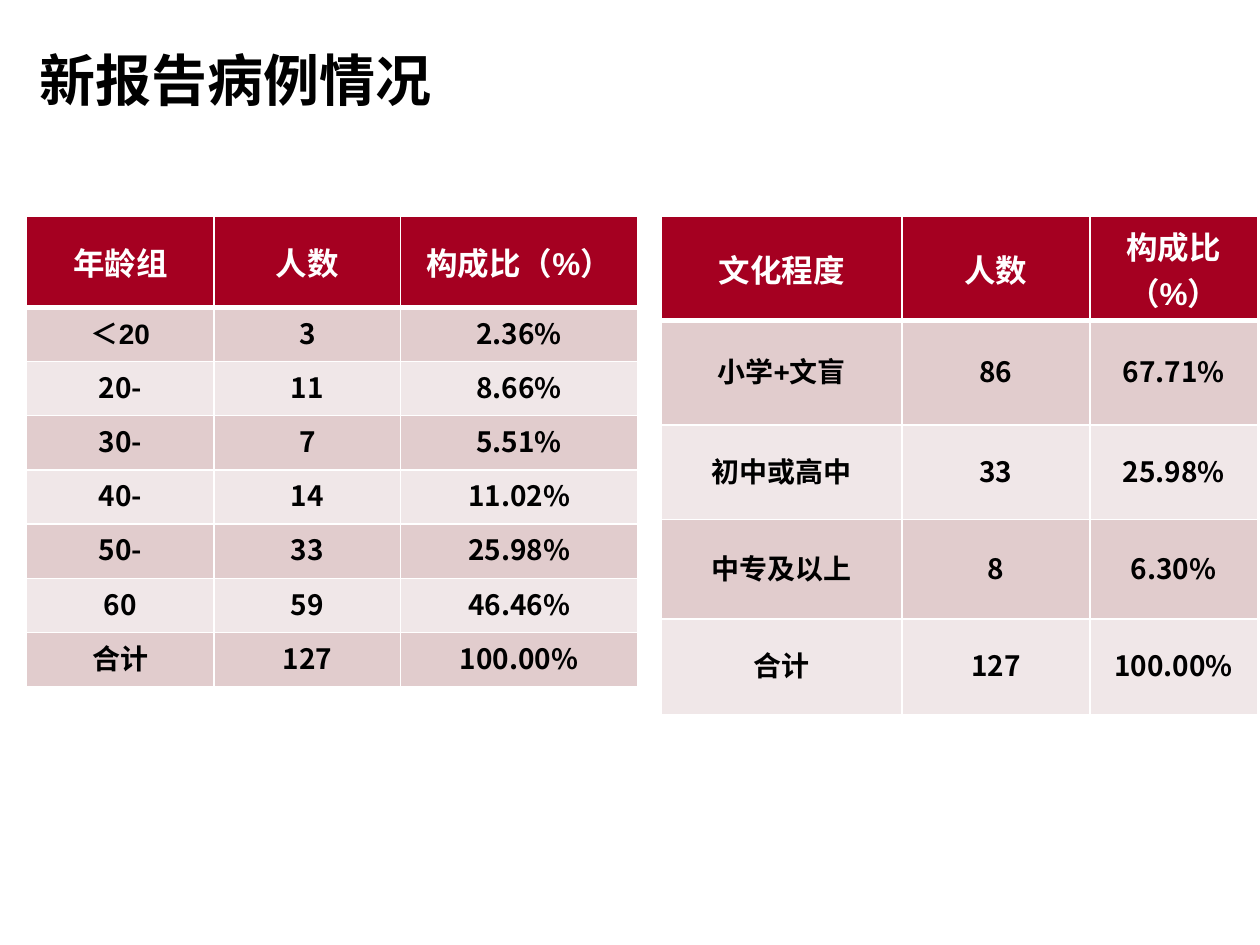
from lxml.etree import SubElement
from pptx import Presentation
from pptx.dml.color import RGBColor
from pptx.enum.text import MSO_ANCHOR, PP_ALIGN
from pptx.oxml.ns import qn
from pptx.util import Inches, Pt

HEADER_FILL = "A50021"
BAND_FILLS = ["E1CCCD", "F0E7E8"]
LABEL_FONT = "Arial"
NUMBER_FONT = "Noto Sans CJK SC"

AGE_ROWS = [
    ["年龄组", "人数", "构成比（%）"],
    ["＜20", "3", "2.36%"],
    ["20-", "11", "8.66%"],
    ["30-", "7", "5.51%"],
    ["40-", "14", "11.02%"],
    ["50-", "33", "25.98%"],
    ["60", "59", "46.46%"],
    ["合计", "127", "100.00%"],
]
EDUCATION_ROWS = [
    ["文化程度", "人数", "构成比（%）"],
    ["小学+文盲", "86", "67.71%"],
    ["初中或高中", "33", "25.98%"],
    ["中专及以上", "8", "6.30%"],
    ["合计", "127", "100.00%"],
]


def rgb(value):
    return RGBColor.from_string(value)


def set_font(p, size, name, color):
    p.font.size = Pt(size)
    p.font.name = name
    p.font.bold = True
    p.font.color.rgb = rgb(color)


def add_title(s, text):
    title = s.shapes.title
    title.left, title.top = Inches(0.21), Inches(0.15)
    title.width, title.height = Inches(3.91), Inches(1.03)
    tf = title.text_frame
    tf.text = text
    tf.word_wrap = True
    tf.vertical_anchor = MSO_ANCHOR.MIDDLE
    p = tf.paragraphs[0]
    p.alignment = PP_ALIGN.LEFT
    p.line_spacing = 0.9
    set_font(p, 32, LABEL_FONT, "000000")


def set_borders(cell, top, bottom):
    tcPr = cell._tc.get_or_add_tcPr()
    for tag, width in (("a:lnL", 1), ("a:lnR", 1), ("a:lnT", top), ("a:lnB", bottom)):
        ln = SubElement(tcPr, qn(tag), w=str(Pt(width)))
        fill = SubElement(ln, qn("a:solidFill"))
        SubElement(fill, qn("a:srgbClr"), val="FFFFFF")


def format_cell(cell, text, row):
    header = row == 0
    cell.text = text
    cell.vertical_anchor = MSO_ANCHOR.MIDDLE
    set_borders(cell, 3 if row == 1 else 1, 3 if header else 1)
    cell.fill.solid()
    cell.fill.fore_color.rgb = rgb(HEADER_FILL if header else BAND_FILLS[(row - 1) % 2])
    p = cell.text_frame.paragraphs[0]
    p.alignment = PP_ALIGN.CENTER
    if header:
        set_font(p, 18, LABEL_FONT, "FFFFFF")
    else:
        cell.margin_left = cell.margin_right = cell.margin_top = Inches(0.01)
        cell.margin_bottom = Inches(0.05)
        set_font(p, 16, NUMBER_FONT if text.isascii() else LABEL_FONT, "000000")


def add_case_table(s, left, rows, widths, heights):
    table = s.shapes.add_table(
        len(rows), len(widths), Inches(left), Inches(1.72),
        Inches(sum(widths)), Inches(sum(heights)),
    ).table
    for column, width in zip(table.columns, widths):
        column.width = Inches(width)
    for i, (values, height) in enumerate(zip(rows, heights)):
        table.rows[i].height = Inches(height)
        for j, text in enumerate(values):
            format_cell(table.cell(i, j), text, i)


def main():
    prs = Presentation()
    prs.slide_width, prs.slide_height = Inches(10), Inches(7.5)
    s = prs.slides.add_slide(prs.slide_layouts[5])
    add_title(s, "新报告病例情况")
    add_case_table(s, 0.21, AGE_ROWS, [1.49, 1.48, 1.88], [0.72] + [0.43] * 7)
    add_case_table(s, 5.25, EDUCATION_ROWS, [1.91, 1.49, 1.33],
                   [0.57, 0.83, 0.75, 0.79, 0.76])
    prs.save("out.pptx")


if __name__ == "__main__":
    main()
